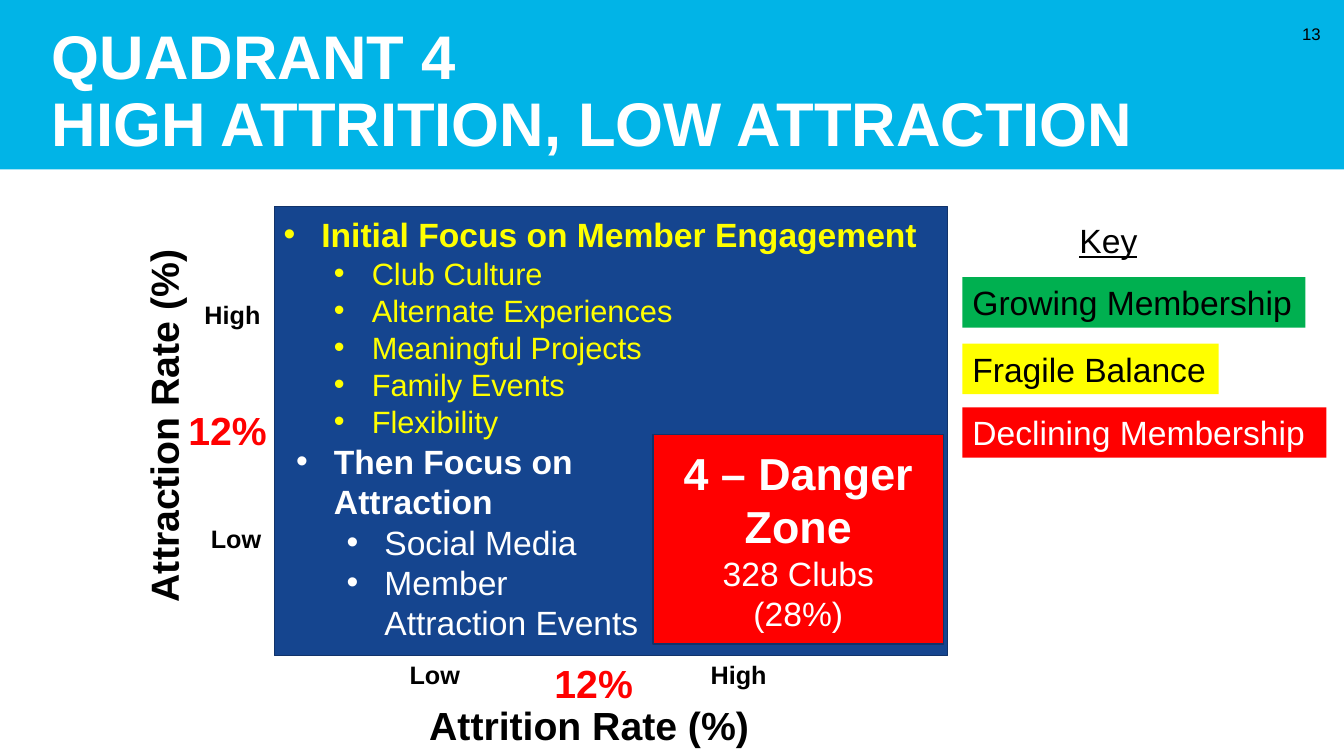
import collections
import pptx
import pptx.util
import pptx.dml.color
import pptx.enum.shapes
import pptx.enum.text
import pptx.oxml.ns
import lxml.etree

Pt = pptx.util.Pt
RGBColor = pptx.dml.color.RGBColor
ALIGN = pptx.enum.text.PP_ALIGN
ANCHOR = pptx.enum.text.MSO_ANCHOR
qn = pptx.oxml.ns.qn

SKY = RGBColor(0x01, 0xB4, 0xE7)
NAVY = RGBColor(0x15, 0x45, 0x8F)
DARK_NAVY = RGBColor(0x11, 0x33, 0x6A)
RED = RGBColor(0xFF, 0x00, 0x00)
GREEN = RGBColor(0x00, 0xB0, 0x50)
YELLOW = RGBColor(0xFF, 0xFF, 0x00)
WHITE = RGBColor(0xFF, 0xFF, 0xFF)
BLACK = RGBColor(0x00, 0x00, 0x00)

Box = collections.namedtuple("Box", "left top width height")


def add_panel(page, box, fill, line=None):
    panel = page.shapes.add_shape(
        pptx.enum.shapes.MSO_SHAPE.RECTANGLE, *map(Pt, box))
    panel.shadow.inherit = False
    panel.fill.solid()
    panel.fill.fore_color.rgb = fill
    if line is None:
        panel.line.fill.background()
    else:
        panel.line.color.rgb = line
        panel.line.width = Pt(1)
    return panel


def style(para, size, color, bold=False, align=ALIGN.LEFT):
    para.alignment = align
    para.font.name = "Arial"
    para.font.size = Pt(size)
    para.font.color.rgb = color
    para.font.bold = bold


def write(shape, text, size, color, bold=False, align=ALIGN.LEFT,
          anchor=ANCHOR.TOP, wrap=False):
    frame = shape.text_frame
    frame.word_wrap = wrap
    frame.vertical_anchor = anchor
    para = frame.paragraphs[0]
    para.text = text
    style(para, size, color, bold, align)
    return para


def add_label(page, box, *args, **options):
    label = page.shapes.add_textbox(*map(Pt, box))
    write(label, *args, **options)
    return label


def add_bullets(page, box, heading, items, item_size, color):
    frame = page.shapes.add_textbox(*map(Pt, box)).text_frame
    frame.word_wrap = True
    for index, text in enumerate([heading, *items]):
        para = frame.add_paragraph() if index else frame.paragraphs[0]
        para.text = text
        para.level = min(index, 1)
        style(para, item_size if index else 24, color, bold=index == 0)
        props = para._p.get_or_add_pPr()
        props.set("marL", str(Pt(63 if index else 27)))
        props.set("indent", str(Pt(-27)))
        # The bullet must precede any default run properties
        font = lxml.etree.Element(qn("a:buFont"), typeface="Arial")
        mark = lxml.etree.Element(qn("a:buChar"), char="•")
        props.insert(0, font)
        props.insert(1, mark)


def add_header(page, box):
    add_panel(page, box, SKY)
    title = page.shapes.add_textbox(
        Pt(box.left + 30), Pt(box.top), Pt(box.width - 54), Pt(box.height))
    title.text_frame.margin_top = 0
    title.text_frame.margin_bottom = Pt(7.2)
    para = write(title, "QUADRANT 4\vHIGH ATTRITION, LOW ATTRACTION",
                 44, WHITE, bold=True, anchor=ANCHOR.BOTTOM, wrap=True)
    para.line_spacing = 0.9
    add_label(page, Box(box.left + box.width - 42.5, box.top + 9.5, 33, 29),
              "13", 12, BLACK, align=ALIGN.RIGHT, anchor=ANCHOR.MIDDLE,
              wrap=True)


def add_axes(page, box):
    bottom = box.height - 1
    # Text, offset from the quadrant panel, width, height, size, colour
    labels = [
        ("Attrition Rate (%)", 103.5, bottom + 30, 245.5, 41, 28, BLACK),
        ("12%", -68.5, 139, 71.5, 41, 28, RED),
        ("12%", 193, bottom, 71.5, 41, 28, RED),
        ("High", 304.5, bottom, 55, 29, 18, BLACK),
        ("High", -57, 62.5, 55, 29, 18, BLACK),
        ("Low", -52.5, 223, 51, 29, 18, BLACK),
        ("Low", 89.5, bottom, 51, 29, 18, BLACK),
    ]
    for text, across, down, width, height, size, color in labels:
        add_label(page, Box(box.left + across, box.top + down, width, height),
                  text, size, color, bold=True)
    side = add_label(page, Box(box.left - 214, box.top + 134.5, 269.5, 41),
                     "Attraction Rate (%)", 28, BLACK, bold=True)
    side.rotation = 270


def add_quadrant(page, box):
    add_panel(page, box, NAVY, DARK_NAVY)
    # Danger zone
    danger = add_panel(page, Box(box.left + 270.5, box.top + 163, 207.5, 149.5),
                       RED, DARK_NAVY)
    write(danger, "4 – Danger Zone", 32, WHITE, bold=True,
          align=ALIGN.CENTER, anchor=ANCHOR.MIDDLE, wrap=True)
    for text in ("328 Clubs", "(28%)"):
        para = danger.text_frame.add_paragraph()
        para.text = text
        style(para, 24, WHITE, align=ALIGN.CENTER)
    # Priorities
    add_bullets(page, Box(box.left - 0.5, box.top + 2, 484, 199),
                "Initial Focus on Member Engagement",
                ["Club Culture", "Alternate Experiences",
                 "Meaningful Projects", "Family Events", "Flexibility"],
                22, YELLOW)
    add_bullets(page, Box(box.left + 8.5, box.top + 164, 268, 152.5),
                "Then Focus on Attraction",
                ["Social Media", "Member Attraction Events"], 24, WHITE)


def add_key(page, box):
    heading = add_label(page, Box(box.left + 76.5, box.top, 56, 36),
                        "Key", 24, BLACK)
    heading.text_frame.paragraphs[0].font.underline = True
    entries = [
        ("Growing Membership", 44.5, 245, GREEN, BLACK),
        ("Fragile Balance", 92, 183, YELLOW, BLACK),
        ("Declining Membership", 137.5, box.width, RED, WHITE),
    ]
    for text, down, width, fill, color in entries:
        entry = add_panel(page, Box(box.left, box.top + down, width, 36), fill)
        write(entry, text, 24, color)


def main():
    deck = pptx.Presentation()
    deck.slide_width, deck.slide_height = Pt(960), Pt(540)
    page = deck.slides.add_slide(deck.slide_layouts[6])
    quadrant = Box(196, 147.5, 481, 321)
    add_header(page, Box(0, 0, 960, 121))
    add_quadrant(page, quadrant)
    add_axes(page, quadrant)
    add_key(page, Box(687.5, 153.5, 260, 173.5))
    deck.save("out.pptx")


if __name__ == "__main__":
    main()
